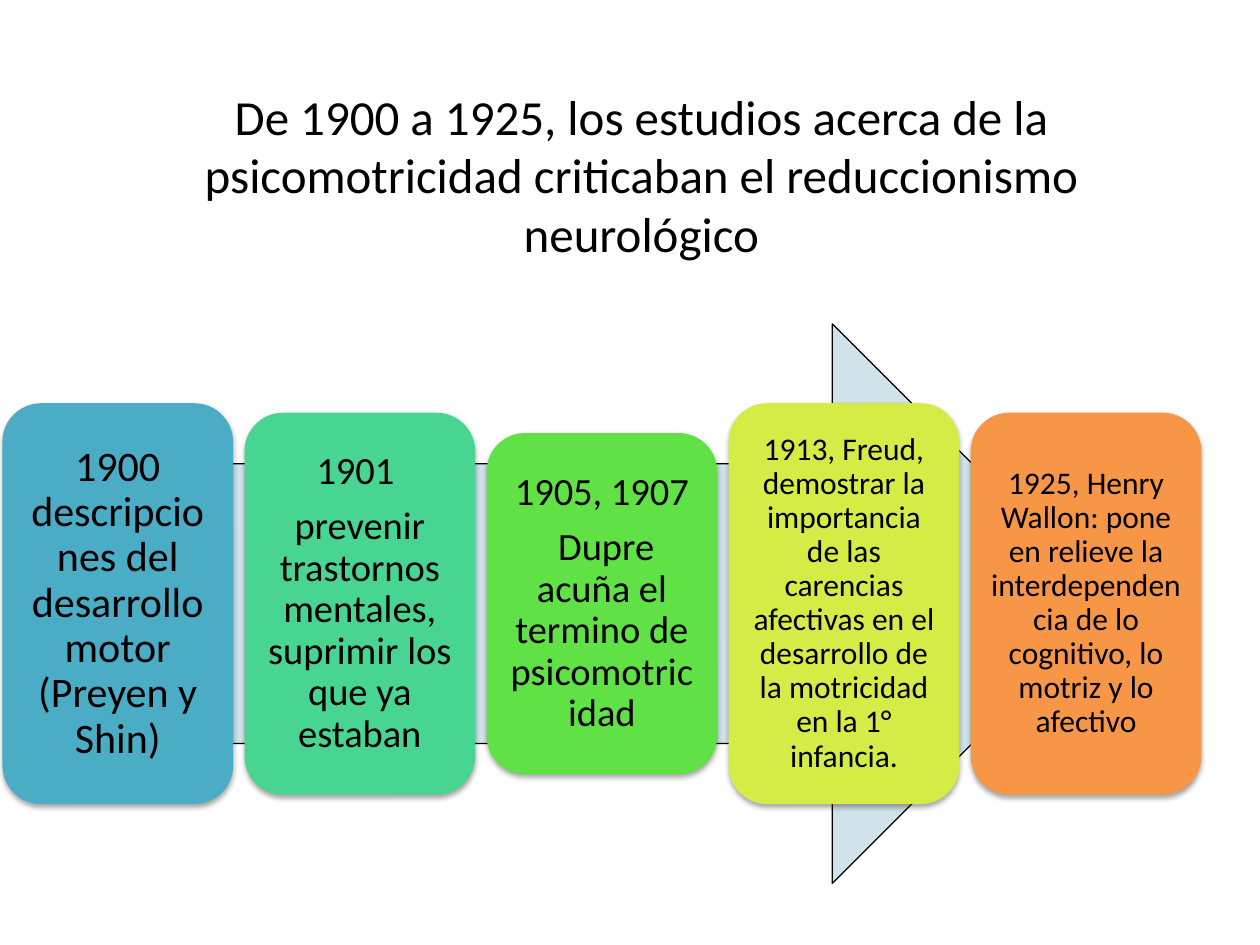
from lxml import etree
from pptx import Presentation
from pptx.dml.color import RGBColor
from pptx.enum.shapes import MSO_SHAPE
from pptx.enum.text import MSO_ANCHOR, PP_ALIGN
from pptx.oxml import parse_xml
from pptx.oxml.ns import nsdecls
from pptx.util import Cm, Pt

ARROW, CARD = MSO_SHAPE.RIGHT_ARROW, MSO_SHAPE.ROUNDED_RECTANGLE
MIDDLE, CENTER = MSO_ANCHOR.MIDDLE, PP_ALIGN.CENTER

# Content
TITLE = ("De 1900 a 1925, los estudios acerca de la psicomotricidad "
         "criticaban el reduccionismo neurológico")
# Paragraphs, fill colour, height (cm), text size (pt), inset (cm)
STAGES = [
    (["1900 descripciones del desarrollo motor (Preyen y Shin)"],
     "blue", 8.08, 24, 0.25),
    (["1901 ", "prevenir trastornos mentales, suprimir los que ya estaban"],
     "teal", 7.7, 22, 0.23),
    (["1905, 1907", " Dupre acuña el termino de psicomotricidad"],
     "green", 6.88, 22, 0.23),
    (["1913, Freud, demostrar la importancia de las carencias afectivas "
      "en el desarrollo de la motricidad en la 1° infancia."],
     "lime", 8.08, 18, 0.18),
    (["1925, Henry Wallon: pone en relieve la interdependencia de lo "
      "cognitivo, lo motriz y lo afectivo"],
     "orange", 7.7, 18, 0.18),
]
COLORS = {
    "text": "000000", "arrow": "D0E3EA", "blue": "4BACC6", "teal": "48D491",
    "green": "60E146", "lime": "D5EC46", "orange": "F79646",
}

# Layout in centimetres
CENTER_Y = 12.17
CARD_LEFT, CARD_WIDTH, CARD_PITCH = 0.05, 4.65, 4.88
ARROW_LEFT, ARROW_WIDTH, ARROW_HEIGHT = 1.85, 20.57, 11.28


def color(name):
    return RGBColor.from_string(COLORS[name])


def write(shape, paragraphs, size, insets, line_spacing=1.0, space_after=0):
    """Fill a shape with centred text; insets are left, top, right, bottom."""
    frame = shape.text_frame
    frame.word_wrap = True
    frame.vertical_anchor = MIDDLE
    (frame.margin_left, frame.margin_top,
     frame.margin_right, frame.margin_bottom) = map(Cm, insets)
    for index, text in enumerate(paragraphs):
        paragraph = frame.add_paragraph() if index else frame.paragraphs[0]
        paragraph.alignment = CENTER
        paragraph.line_spacing = line_spacing
        paragraph.space_after = Pt(space_after)
        run = paragraph.add_run()
        run.text = text
        run.font.name = "Calibri"
        run.font.size = Pt(size)
        run.font.color.rgb = color("text")


def add_centered(slide, kind, left, width, height, fill):
    """Add a filled shape centred on the timeline axis."""
    shape = slide.shapes.add_shape(
        kind, Cm(left), Cm(CENTER_Y - height / 2), Cm(width), Cm(height))
    shape.shadow.inherit = False
    shape.fill.solid()
    shape.fill.fore_color.rgb = color(fill)
    return shape


def add_soft_shadow(shape):
    properties = shape.fill._xPr
    effects = properties.find("{*}effectLst")
    shadow = parse_xml(
        f'<a:outerShdw {nsdecls("a")} blurRad="{Pt(3.1)}" dist="{Pt(1.8)}" '
        'dir="5400000" rotWithShape="0"/>')
    tint = etree.SubElement(shadow, shadow.tag.replace("outerShdw", "srgbClr"),
                            val=COLORS["text"])
    etree.SubElement(tint, shadow.tag.replace("outerShdw", "alpha"),
                     val="35000")
    effects.append(shadow)


def main():
    presentation = Presentation()
    presentation.slide_width, presentation.slide_height = Cm(25.4), Cm(19.05)
    slide = presentation.slides.add_slide(presentation.slide_layouts[6])

    # Timeline arrow
    arrow = add_centered(slide, ARROW, ARROW_LEFT, ARROW_WIDTH, ARROW_HEIGHT,
                         "arrow")
    arrow.line.color.rgb = color("text")
    arrow.line.width = Pt(0.75)

    # Stage cards
    for index, (paragraphs, fill, height, size, inset) in enumerate(STAGES):
        card = add_centered(slide, CARD, CARD_LEFT + index * CARD_PITCH,
                            CARD_WIDTH, height, fill)
        card.line.fill.background()
        add_soft_shadow(card)
        write(card, paragraphs, size, [inset] * 4,
              line_spacing=0.9, space_after=0.35 * size)

    # Title, raised by a deeper bottom inset
    title = slide.shapes.add_textbox(Cm(1.5), Cm(2.51), Cm(22.86), Cm(3.18))
    write(title, [TITLE], 28, [0.25, 0.13, 0.25, 1.3])

    presentation.save("out.pptx")


if __name__ == "__main__":
    main()
